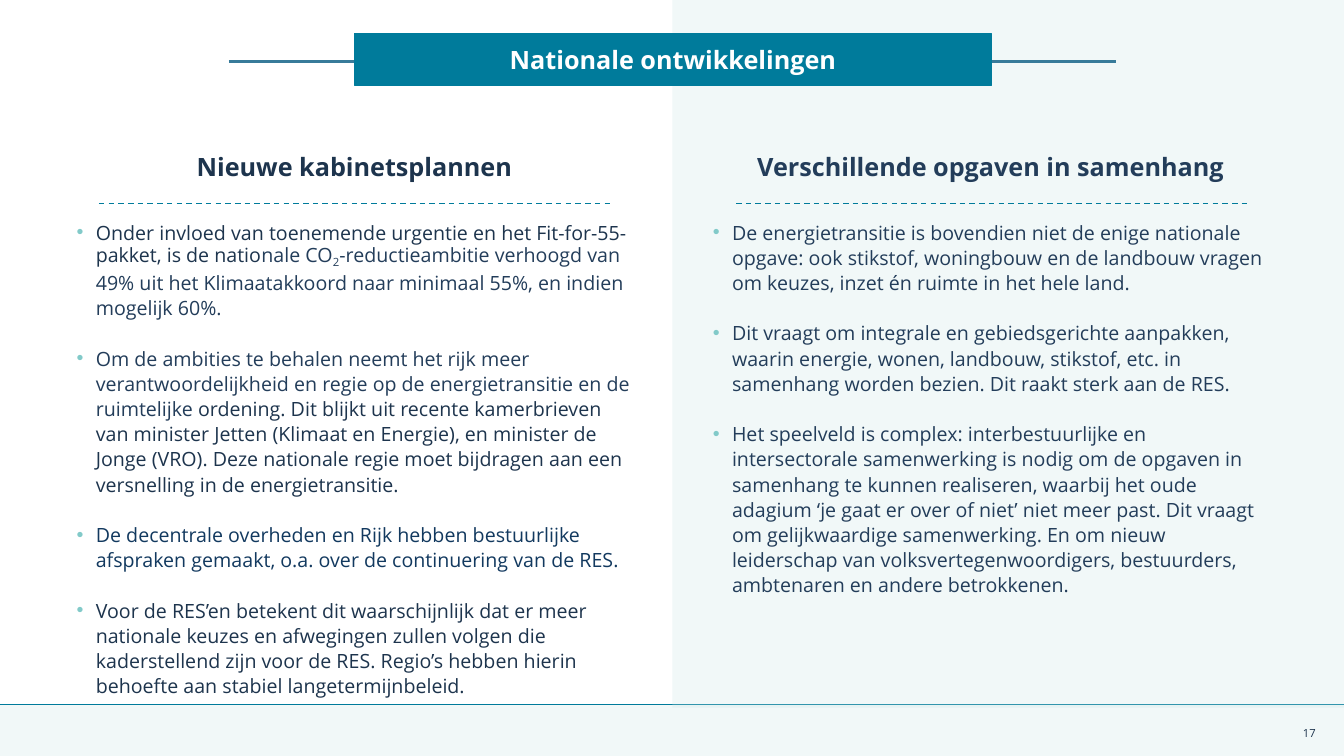
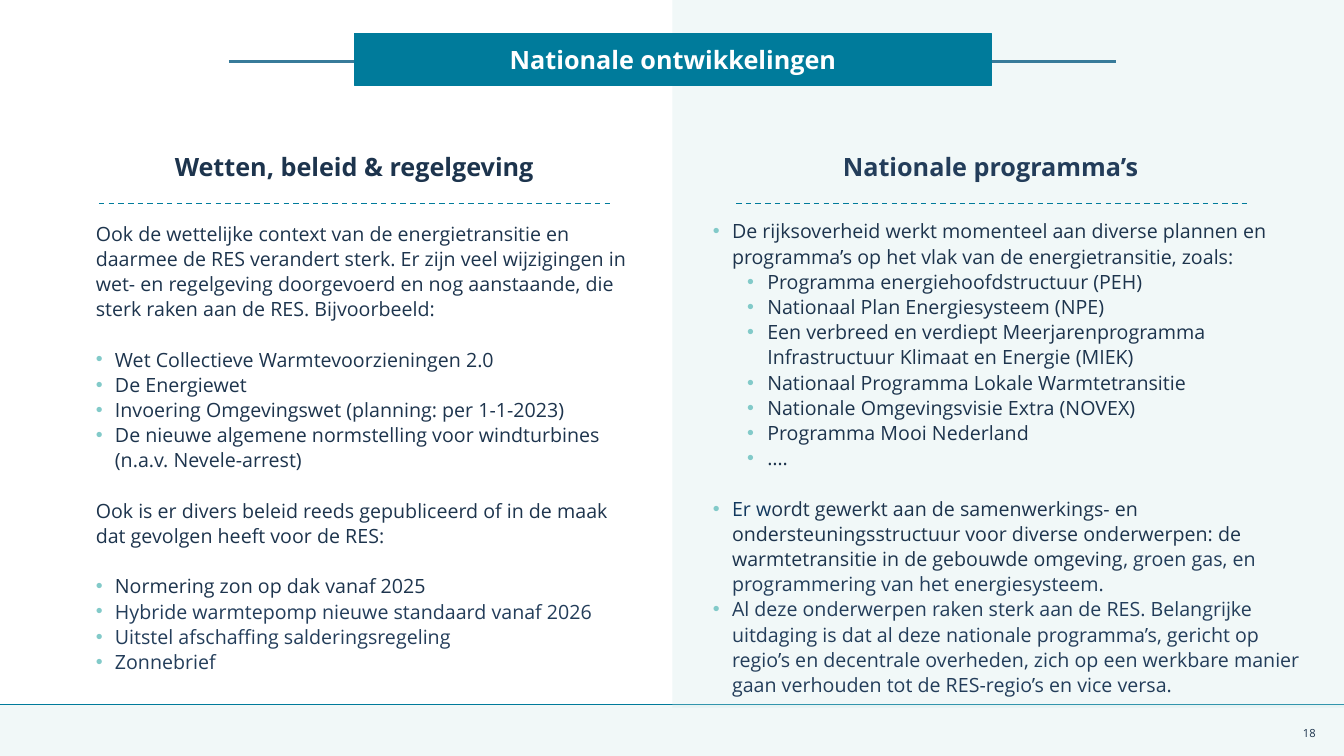
from dataclasses import dataclass
from enum import Enum

import pptx
import pptx.dml.color
import pptx.enum.dml
import pptx.enum.shapes
import pptx.enum.text
import pptx.oxml.ns
import pptx.oxml.xmlchemy
import pptx.util

Inches = pptx.util.Inches
RGBColor = pptx.dml.color.RGBColor
Align = pptx.enum.text.PP_ALIGN
Anchor = pptx.enum.text.MSO_ANCHOR
new_element = pptx.oxml.xmlchemy.OxmlElement

FONT = "Open Sans"
WHITE = RGBColor(0xFF, 0xFF, 0xFF)
INK = RGBColor(0x1D, 0x34, 0x4D)
SLATE = RGBColor(0x23, 0x3D, 0x5A)
NAVY = RGBColor(0x12, 0x39, 0x5F)
TEAL = RGBColor(0x00, 0x7B, 0x9B)
STEEL = RGBColor(0x38, 0x7B, 0x9A)
AQUA = RGBColor(0x82, 0xCA, 0xC9)
FOOTER_TINT = RGBColor(0xE4, 0xF3, 0xF3)
PANEL_TINT = RGBColor(0xC8, 0xE5, 0xE6)

SLIDE_WIDTH, SLIDE_HEIGHT = 13.33, 7.5
FOOTER_TOP = 6.99
COMPARISON_LAYOUT = 4
HEADING_LEFTS = (0.76, 7.07)
LINE_HEIGHT = pptx.util.Pt(18)


class Level(Enum):
    """Left margin and hanging indent in inches."""
    PLAIN = (0, 0)
    BULLET = (0.19, 0.19)
    SUB_BULLET = (0.54, 0.2)


@dataclass(frozen=True)
class Span:
    text: str
    color: RGBColor = INK
    subscript: bool = False


@dataclass(frozen=True)
class Item:
    spans: tuple[Span, ...]
    level: Level = Level.BULLET
    gap: bool = False


@dataclass(frozen=True)
class Box:
    left: float
    top: float
    width: float
    height: float


@dataclass(frozen=True)
class Column:
    heading: str
    heading_color: RGBColor
    box: Box
    items: tuple[Item, ...]


@dataclass(frozen=True)
class Page:
    number: int
    title: str
    columns: tuple[Column, Column]


def item(text: str, color: RGBColor = INK, level: Level = Level.BULLET,
         gap: bool = False) -> Item:
    return Item((Span(text, color),), level, gap)


PAGES = (
    Page(17, "Nationale ontwikkelingen", (
        Column("Nieuwe kabinetsplannen", INK, Box(0.76, 2.17, 5.51, 4.77), (
            Item((
                Span("Onder invloed van toenemende urgentie en het Fit-for-55-pakket, is de natio"),
                Span("nale CO", SLATE),
                Span("2", SLATE, subscript=True),
                Span("-reductieambitie verhoogd van 49% uit het Klimaatakkoord naar "
                     "minimaal 55%, en indien mogelijk 60%.", SLATE),
            )),
            Item((
                Span("Om de ambities te behalen neemt het rijk meer verantwoordelijkheid "
                     "en regie op de energietransitie en de ruimtelijke ", SLATE),
                Span("ordening. Dit blijkt uit recente kamerbrieven van minister Jetten "
                     "(Klimaat en Energie), en minister de Jonge (VRO). Deze nationale regie "
                     "moet bijdragen aan een versnelling in de energietransitie."),
            ), gap=True),
            item("De decentrale overheden en Rijk hebben bestuurlijke afspraken gemaakt, "
                 "o.a. over de continuering van de RES.", NAVY, gap=True),
            item("Voor de RES’en betekent dit waarschijnlijk dat er meer nationale keuzes "
                 "en afwegingen zullen volgen die kaderstellend zijn voor de RES. Regio’s "
                 "hebben hierin behoefte aan stabiel langetermijnbeleid.", gap=True),
        )),
        Column("Verschillende opgaven in samenhang", SLATE, Box(7.07, 2.17, 5.51, 4.3), (
            item("De energietransitie is bovendien niet de enige nationale opgave: ook "
                 "stikstof, woningbouw en de landbouw vragen om keuzes, inzet én ruimte in "
                 "het hele land.", SLATE),
            item("Dit vraagt om integrale en gebiedsgerichte aanpakken, waarin energie, "
                 "wonen, landbouw, stikstof, etc. in samenhang worden bezien. Dit raakt "
                 "sterk aan de RES.", SLATE, gap=True),
            item("Het speelveld is complex: interbestuurlijke en intersectorale "
                 "samenwerking is nodig om de opgaven in samenhang te kunnen realiseren, "
                 "waarbij het oude adagium ‘je gaat er over of niet’ niet meer past. Dit "
                 "vraagt om gelijkwaardige samenwerking. En om nieuw leiderschap van "
                 "volksvertegenwoordigers, bestuurders, ambtenaren en andere betrokkenen.",
                 SLATE, gap=True),
        )),
    )),
    Page(18, "Nationale ontwikkelingen", (
        Column("Wetten, beleid & regelgeving", INK, Box(0.95, 2.18, 5.31, 4.55), (
            item("Ook de wettelijke context van de energietransitie en daarmee de RES "
                 "verandert sterk. Er zijn veel wijzigingen in wet- en regelgeving "
                 "doorgevoerd en nog aanstaande, die sterk raken aan de RES. Bijvoorbeeld:",
                 level=Level.PLAIN),
            item("Wet Collectieve Warmtevoorzieningen 2.0", gap=True),
            item("De Energiewet"),
            item("Invoering Omgevingswet (planning: per 1-1-2023)"),
            item("De nieuwe algemene normstelling voor windturbines (n.a.v. Nevele-arrest)"),
            item("Ook is er divers beleid reeds gepubliceerd of in de maak dat gevolgen "
                 "heeft voor de RES:", level=Level.PLAIN, gap=True),
            item("Normering zon op dak vanaf 2025", gap=True),
            item("Hybride warmtepomp nieuwe standaard vanaf 2026", SLATE),
            item("Uitstel afschaffing salderingsregeling", SLATE),
            item("Zonnebrief", SLATE),
        )),
        Column("Nationale programma’s", SLATE, Box(7.07, 2.16, 5.87, 4.81), (
            item("De rijksoverheid werkt momenteel aan diverse plannen en programma’s op "
                 "het vlak van de energietransitie, zoals:"),
            *(item(programme, level=Level.SUB_BULLET) for programme in (
                "Programma energiehoofdstructuur (PEH)",
                "Nationaal Plan Energiesysteem (NPE)",
                "Een verbreed en verdiept Meerjarenprogramma Infrastructuur Klimaat en "
                "Energie (MIEK)",
                "Nationaal Programma Lokale Warmtetransitie",
                "Nationale Omgevingsvisie Extra (NOVEX)",
                "Programma Mooi Nederland",
                "….",
            )),
            Item((
                Span("Er w", NAVY),
                Span("ordt gewerkt aan de samenwerkings- en ondersteuningsstructuur voor "
                     "diverse onderwerpen: de warmtetransitie in de gebouwde omgeving"),
                Span(", groen gas, en programmering van het energiesysteem.", SLATE),
            ), gap=True),
            item("Al deze onderwerpen raken sterk aan de RES. Belangrijke uitdaging is dat "
                 "al deze nationale programma’s, gericht op regio’s en decentrale overheden, "
                 "zich op een werkbare manier gaan verhouden tot de RES-regio’s en vice "
                 "versa.", SLATE),
        )),
    )),
)


def draw_tint(slide, box: Box, color: RGBColor, opacity: int) -> None:
    """Draw a see-through rectangle; opacity is a percentage."""
    tint = slide.shapes.add_shape(
        pptx.enum.shapes.MSO_SHAPE.RECTANGLE, Inches(box.left), Inches(box.top),
        Inches(box.width), Inches(box.height))
    tint.shadow.inherit = False
    tint.line.fill.background()
    tint.fill.solid()
    tint.fill.fore_color.rgb = color
    solid = tint._element.spPr.find(pptx.oxml.ns.qn("a:solidFill"))
    alpha = new_element("a:alpha")
    alpha.set("val", str(opacity * 1000))
    solid[0].append(alpha)


def draw_rule(slide, left: float, right: float, y: float, color: RGBColor,
              weight: float, dashed: bool = False) -> None:
    rule = slide.shapes.add_connector(
        pptx.enum.shapes.MSO_CONNECTOR.STRAIGHT,
        Inches(left), Inches(y), Inches(right), Inches(y))
    rule.line.color.rgb = color
    rule.line.width = pptx.util.Pt(weight)
    if dashed:
        rule.line.dash_style = pptx.enum.dml.MSO_LINE.DASH
    rule._element.spPr.append(new_element("a:effectLst"))


def draw_backdrop(slide) -> None:
    draw_tint(slide, Box(0, FOOTER_TOP, SLIDE_WIDTH, SLIDE_HEIGHT - FOOTER_TOP),
              FOOTER_TINT, 50)
    draw_rule(slide, 0, SLIDE_WIDTH, FOOTER_TOP, TEAL, 1)
    draw_tint(slide, Box(6.67, 0, 6.66, 7.02), PANEL_TINT, 25)
    draw_rule(slide, 2.27, 11.07, 0.61, STEEL, 2.25)
    for left in (0.98, 7.3):
        draw_rule(slide, left, left + 5.09, 2.02, TEAL, 1, dashed=True)


def place(shape, box: Box, anchor: Anchor, top_inset: float = 0) -> None:
    shape.left, shape.top = Inches(box.left), Inches(box.top)
    shape.width, shape.height = Inches(box.width), Inches(box.height)
    frame = shape.text_frame
    frame.margin_left = frame.margin_right = frame.margin_bottom = 0
    frame.margin_top = Inches(top_inset)
    frame.word_wrap = True
    frame.auto_size = pptx.enum.text.MSO_AUTO_SIZE.NONE
    frame.vertical_anchor = anchor


def format_run(run, size: float, color: RGBColor, bold: bool = False) -> None:
    run.font.name = FONT
    run.font.size = pptx.util.Pt(size)
    run.font.bold = bold
    run.font.color.rgb = color


def write_line(shape, text: str, size: float, color: RGBColor, align: Align,
               bold: bool = False) -> None:
    shape.text_frame.text = text
    paragraph = shape.text_frame.paragraphs[0]
    paragraph.alignment = align
    paragraph.space_before = pptx.util.Pt(0)
    format_run(paragraph.runs[0], size, color, bold)


def set_bullet(paragraph, level: Level) -> None:
    margin, hanging = level.value
    properties = paragraph._p.get_or_add_pPr()
    properties.set("marL", str(Inches(margin)))
    properties.set("indent", str(-Inches(hanging)))
    if level is Level.PLAIN:
        properties.append(new_element("a:buNone"))
        return
    bullet_color = new_element("a:buClr")
    rgb = new_element("a:srgbClr")
    rgb.set("val", str(AQUA))
    bullet_color.append(rgb)
    bullet_font = new_element("a:buFont")
    bullet_font.set("typeface", "Arial")
    character = new_element("a:buChar")
    character.set("char", "•")
    for part in (bullet_color, bullet_font, character):
        properties.append(part)


def write_items(frame, items: tuple[Item, ...]) -> None:
    for index, entry in enumerate(items):
        paragraph = frame.add_paragraph() if index else frame.paragraphs[0]
        paragraph.level = 1 if entry.level is Level.SUB_BULLET else 0
        set_bullet(paragraph, entry.level)
        paragraph.alignment = Align.LEFT
        paragraph.line_spacing = LINE_HEIGHT
        paragraph.space_before = LINE_HEIGHT if entry.gap else pptx.util.Pt(0)
        for span in entry.spans:
            run = paragraph.add_run()
            run.text = span.text
            format_run(run, 14, span.color)
            if span.subscript:
                run._r.get_or_add_rPr().set("baseline", "-25000")


def build_page(deck, page: Page) -> None:
    slide = deck.slides.add_slide(deck.slide_layouts[COMPARISON_LAYOUT])
    title, *column_parts = list(slide.placeholders)
    draw_backdrop(slide)
    for placeholder in (title, *column_parts):
        slide.shapes._spTree.append(placeholder._element)  # bring above the backdrop

    place(title, Box(3.52, 0.33, 6.31, 0.52), Anchor.MIDDLE, top_inset=0.03)
    title.fill.solid()
    title.fill.fore_color.rgb = TEAL
    title.line.color.rgb = TEAL
    title.line.width = pptx.util.Pt(0.75)
    write_line(title, page.title, 18, WHITE, Align.CENTER, bold=True)
    title.text_frame.paragraphs[0].line_spacing = 0.9

    headings, bodies = column_parts[::2], column_parts[1::2]
    for column, heading, body, left in zip(page.columns, headings, bodies, HEADING_LEFTS):
        place(heading, Box(left, 1.47, 5.51, 0.33), Anchor.BOTTOM)
        write_line(heading, column.heading, 18, column.heading_color, Align.CENTER, bold=True)
        set_bullet(heading.text_frame.paragraphs[0], Level.PLAIN)
        place(body, column.box, Anchor.TOP)
        write_items(body.text_frame, column.items)

    page_number = slide.shapes.add_textbox(0, 0, 0, 0)
    place(page_number, Box(12.57, 7.07, 0.48, 0.4), Anchor.MIDDLE)
    write_line(page_number, str(page.number), 8, INK, Align.RIGHT)


def main() -> None:
    deck = pptx.Presentation()
    deck.slide_width, deck.slide_height = Inches(SLIDE_WIDTH), Inches(SLIDE_HEIGHT)
    for page in PAGES:
        build_page(deck, page)
    deck.save("out.pptx")


if __name__ == "__main__":
    main()
